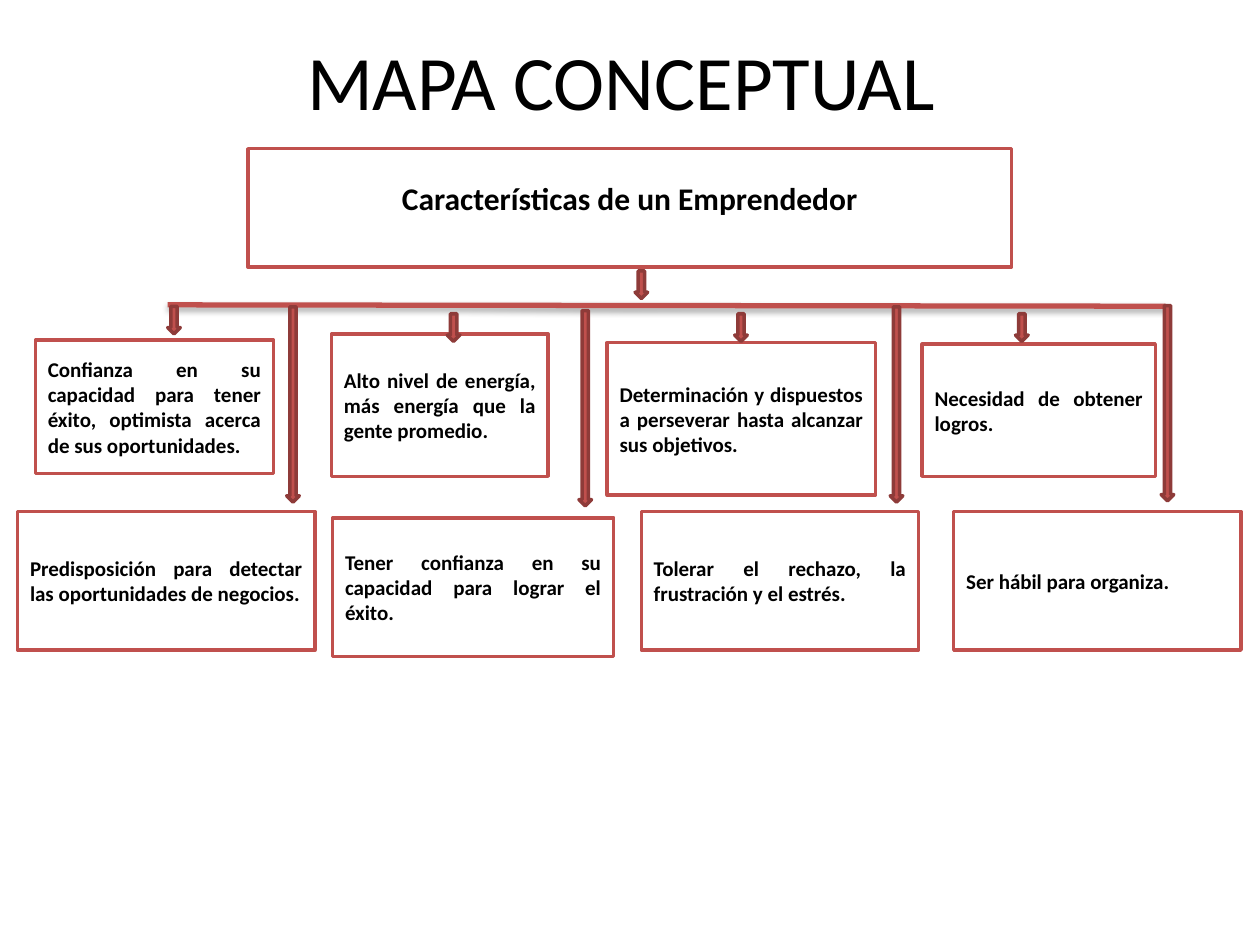
from dataclasses import dataclass

from lxml import etree
from pptx import Presentation
from pptx.dml.color import RGBColor
from pptx.enum.shapes import MSO_CONNECTOR, MSO_SHAPE
from pptx.enum.text import MSO_ANCHOR, PP_ALIGN
from pptx.oxml.ns import qn
from pptx.util import Pt

RECTANGLE, RIGHT_ARROW = MSO_SHAPE.RECTANGLE, MSO_SHAPE.RIGHT_ARROW
STRAIGHT = MSO_CONNECTOR.STRAIGHT
MIDDLE = MSO_ANCHOR.MIDDLE
CENTER, JUSTIFY = PP_ALIGN.CENTER, PP_ALIGN.JUSTIFY


@dataclass(frozen=True)
class Theme:
    font: str = "Calibri"
    ink: str = "000000"
    paper: str = "FFFFFF"
    accent: str = "C0504D"
    accent_dark: str = "8E3B39"
    title_size: int = 44
    heading_size: int = 18
    body_size: int = 12
    border: int = 2
    trunk_width: int = 3
    arrow_thickness: float = 7.2


class ConceptMap:
    def __init__(self, slide, theme):
        self.slide = slide
        self.theme = theme

    def fill_text(self, frame, text, size, align, bold=True):
        frame.word_wrap = True
        frame.vertical_anchor = MIDDLE
        paragraph = frame.paragraphs[0]
        paragraph.alignment = align
        run = paragraph.add_run()
        run.text = text
        run.font.name = self.theme.font
        run.font.size = Pt(size)
        run.font.bold = bold
        run.font.color.rgb = RGBColor.from_string(self.theme.ink)

    def title(self, text, left, top, width, height):
        title = self.slide.shapes.title
        title.left, title.top = Pt(left), Pt(top)
        title.width, title.height = Pt(width), Pt(height)
        self.fill_text(title.text_frame, text, self.theme.title_size, CENTER, bold=False)

    def shape(self, preset, left, top, width, height, fill, line):
        shape = self.slide.shapes.add_shape(preset, Pt(left), Pt(top), Pt(width), Pt(height))
        shape.shadow.inherit = False
        shape.fill.solid()
        shape.fill.fore_color.rgb = RGBColor.from_string(fill)
        shape.line.color.rgb = RGBColor.from_string(line)
        shape.line.width = Pt(self.theme.border)
        return shape

    def box(self, text, left, top, width, height, size=None, align=JUSTIFY):
        box = self.shape(RECTANGLE, left, top, width, height, self.theme.paper, self.theme.accent)
        self.fill_text(box.text_frame, text, size or self.theme.body_size, align)
        return box

    def heading(self, text, left, top, width, height):
        heading = self.box(text, left, top, width, height, self.theme.heading_size, CENTER)
        heading.text_frame.margin_bottom = Pt(14.6)

    def down_arrow(self, center, top, length):
        thickness = self.theme.arrow_thickness
        arrow = self.shape(RIGHT_ARROW, center - length / 2, top + (length - thickness) / 2,
                           length, thickness, self.theme.accent, self.theme.accent_dark)
        arrow.rotation = 90

    def trunk(self, start_x, start_y, end_x, end_y):
        trunk = self.slide.shapes.add_connector(
            STRAIGHT, Pt(start_x), Pt(start_y), Pt(end_x), Pt(end_y))
        trunk.line.color.rgb = RGBColor.from_string(self.theme.accent)
        trunk.line.width = Pt(self.theme.trunk_width)
        effects = etree.SubElement(trunk._element.spPr, qn("a:effectLst"))
        shadow = etree.SubElement(effects, qn("a:outerShdw"), blurRad=str(Pt(3.1)),
                                  dist=str(Pt(1.8)), dir="5400000", rotWithShape="0")
        color = etree.SubElement(shadow, qn("a:srgbClr"), val=self.theme.ink)
        etree.SubElement(color, qn("a:alpha"), val="35000")


TRAITS = [
    ("Confianza en su capacidad para tener éxito, optimista acerca de sus oportunidades.",
     20.2, 194.4, 136.1, 76.3),
    ("Alto nivel de energía, más energía que la gente promedio.",
     189.4, 190.8, 123.8, 81.4),
    ("Determinación y dispuestos a perseverar hasta alcanzar sus objetivos.",
     347, 195.8, 153.4, 87.1),
    ("Necesidad de obtener logros.", 527, 196.6, 133.2, 75.6),
    ("Predisposición para detectar las oportunidades de negocios.",
     10.1, 292.3, 169.9, 79.2),
    ("Tener confianza en su capacidad para lograr el éxito.",
     190.1, 295.9, 160.6, 79.2),
    ("Tolerar el rechazo, la frustración y el estrés.",
     366.5, 292.3, 158.4, 79.2),
    ("Ser hábil para organiza.", 545, 292.3, 164.2, 79.2),
]
LONG_LENGTH, SHORT_LENGTH = 111.6, 15.8
LONG_ARROWS = [(167.4, 175.3), (334.4, 177.5), (512.3, 175.3), (667.1, 174.6)]
SHORT_ARROWS = [(99.4, 175), (259.2, 179.3), (423.4, 179.3), (583.9, 179.3), (366.5, 154.8)]


def main():
    presentation = Presentation()
    presentation.slide_width, presentation.slide_height = Pt(720), Pt(540)
    slide = presentation.slides.add_slide(presentation.slide_layouts[5])
    concept_map = ConceptMap(slide, Theme())

    concept_map.title("MAPA CONCEPTUAL ", 36, 0.7, 648, 90)
    concept_map.heading("Características de un Emprendedor", 141.8, 85, 436.3, 67.7)
    for trait in TRAITS:
        concept_map.box(*trait)
    concept_map.trunk(95.8, 174.2, 666, 175)
    for arrows, length in ((LONG_ARROWS, LONG_LENGTH), (SHORT_ARROWS, SHORT_LENGTH)):
        for center, top in arrows:
            concept_map.down_arrow(center, top, length)

    presentation.save("out.pptx")


if __name__ == "__main__":
    main()
